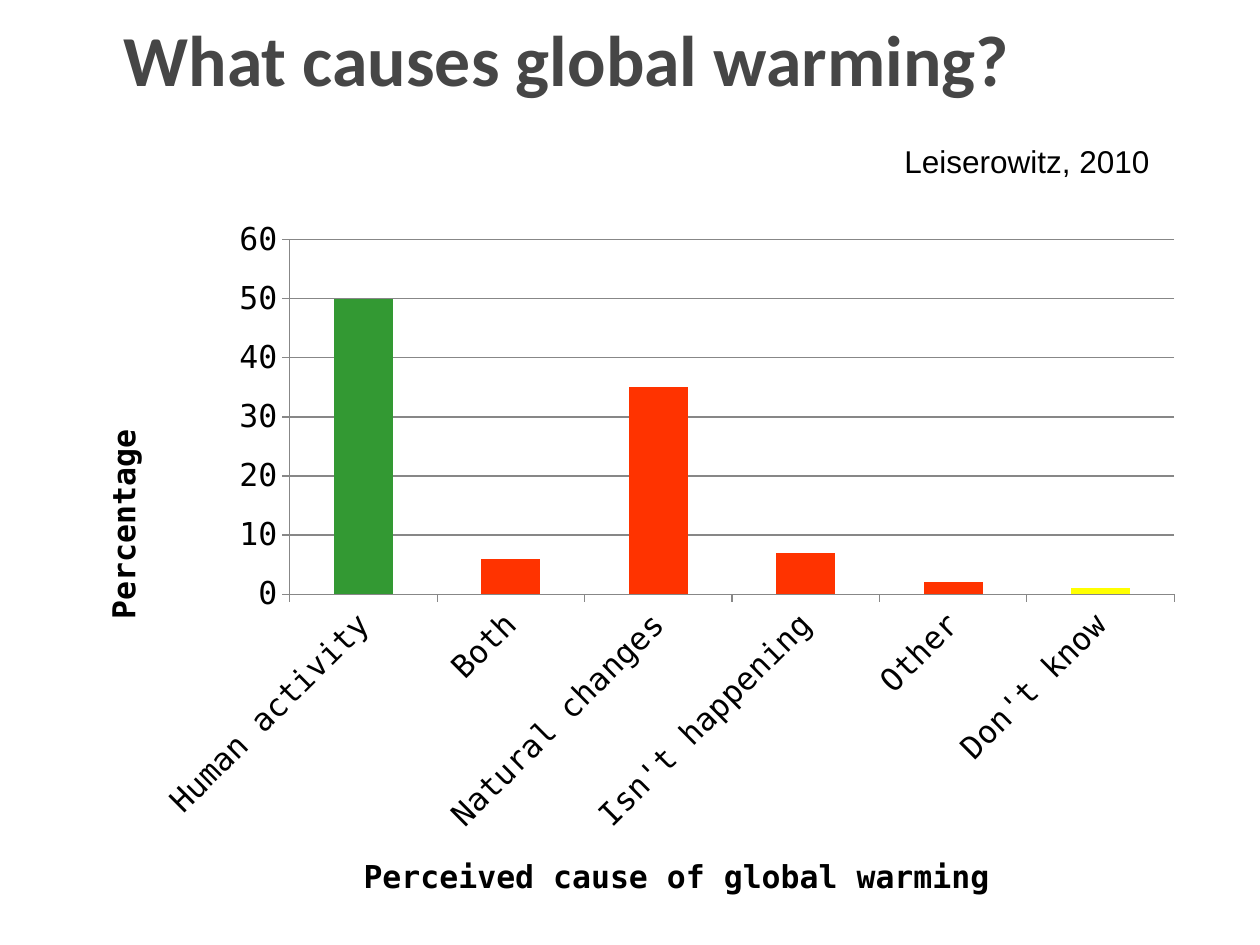
"""Build the slide on the perceived causes of global warming."""
import pptx
import pptx.chart.data
import pptx.dml.color
import pptx.enum.chart
import pptx.enum.text
import pptx.oxml
import pptx.oxml.ns
import pptx.util

Inches = pptx.util.Inches

THEME = {
    "title": {"face": "Calibri", "size": 41, "color": "464646", "bold": True},
    "source": {"face": "Arial", "size": 18, "color": "000000", "bold": False},
    "labels": {"face": "DejaVu Sans Mono", "size": 18, "color": "000000", "bold": False},
    "axis_title": {"face": "DejaVu Sans Mono", "size": 18, "color": "000000", "bold": True},
    "human": "339933",
    "sceptic": "FF3300",
    "unsure": "FFFF00",
    "lines": "878787",
}

TITLE = "What causes global warming?"
SOURCE = "Leiserowitz, 2010"
CAUSES = [
    ("Human activity", 50, "human"),
    ("Both", 6, "sceptic"),
    ("Natural changes", 35, "sceptic"),
    ("Isn't happening", 7, "sceptic"),
    ("Other", 2, "sceptic"),
    ("Don't know", 1, "unsure"),
]
PLOT_LAYOUT = {"x": 0.2, "y": 0.05, "w": 0.78, "h": 0.5}
CAUSE_AXIS = ("Perceived cause of global warming", {"x": 0.26, "y": 0.91})
PERCENT_AXIS = ("Percentage", {"x": 0.03, "y": 0.31})


def rgb(value):
    return pptx.dml.color.RGBColor.from_string(value)


def style_font(font, role):
    style = THEME[role]
    font.name = style["face"]
    font.size = pptx.util.Pt(style["size"])
    font.bold = style["bold"]
    font.color.rgb = rgb(style["color"])


def set_layout(parent, fractions, index):
    for old in parent.findall(pptx.oxml.ns.qn("c:layout")):
        parent.remove(old)
    target = '<c:layoutTarget val="inner"/>' if "w" in fractions else ""
    modes = "".join(f'<c:{edge}Mode val="edge"/>' for edge in "xy")
    values = "".join(f'<c:{key} val="{value}"/>' for key, value in fractions.items())
    parent.insert(index, pptx.oxml.parse_xml(
        f'<c:layout {pptx.oxml.ns.nsdecls("c")}><c:manualLayout>'
        f"{target}{modes}{values}</c:manualLayout></c:layout>"))


def format_axis(axis, heading):
    wording, position = heading
    axis.has_title = True
    axis.axis_title.text_frame.text = wording
    style_font(axis.axis_title.text_frame.paragraphs[0].runs[0].font, "axis_title")
    set_layout(axis.axis_title._element, position, 1)
    style_font(axis.tick_labels.font, "labels")
    axis.major_tick_mark = pptx.enum.chart.XL_TICK_MARK.OUTSIDE
    axis.minor_tick_mark = pptx.enum.chart.XL_TICK_MARK.NONE
    axis.format.line.color.rgb = rgb(THEME["lines"])


def add_title(slide):
    title = slide.shapes.title
    title.left, title.top = Inches(0), Inches(-0.17)
    title.width, title.height = Inches(9), Inches(1.25)
    title.text_frame.text = TITLE
    title.text_frame.vertical_anchor = pptx.enum.text.MSO_ANCHOR.MIDDLE
    paragraph = title.text_frame.paragraphs[0]
    paragraph.alignment = pptx.enum.text.PP_ALIGN.CENTER
    style_font(paragraph.runs[0].font, "title")


def add_source(slide):
    source = slide.shapes.add_textbox(Inches(7.08), Inches(1.08), Inches(2.17), Inches(0.4))
    source.text_frame.word_wrap = True
    source.text_frame.auto_size = pptx.enum.text.MSO_AUTO_SIZE.SHAPE_TO_FIT_TEXT
    source.text_frame.text = SOURCE
    style_font(source.text_frame.paragraphs[0].runs[0].font, "source")


def add_causes_chart(slide):
    survey = pptx.chart.data.CategoryChartData()
    survey.categories = [cause for cause, _, _ in CAUSES]
    survey.add_series("Series 1", [percent for _, percent, _ in CAUSES])
    chart = slide.shapes.add_chart(
        pptx.enum.chart.XL_CHART_TYPE.COLUMN_CLUSTERED,
        Inches(0.5), Inches(1.62), Inches(9), Inches(5.63), survey).chart
    chart.has_legend = False
    chart.has_title = False
    style_font(chart.font, "labels")
    set_layout(chart._chartSpace.chart.plotArea, PLOT_LAYOUT, 0)

    bars = chart.plots[0]
    bars.gap_width = 150
    bars.vary_by_categories = False
    series = bars.series[0]
    series.format.fill.solid()
    series.format.fill.fore_color.rgb = rgb(THEME["sceptic"])
    for index, (_, _, view) in enumerate(CAUSES):
        if view != "sceptic":
            fill = series.points[index].format.fill
            fill.solid()
            fill.fore_color.rgb = rgb(THEME[view])

    format_axis(chart.category_axis, CAUSE_AXIS)
    format_axis(chart.value_axis, PERCENT_AXIS)
    label_body = chart.category_axis._element.find(
        f'{pptx.oxml.ns.qn("c:txPr")}/{pptx.oxml.ns.qn("a:bodyPr")}')
    label_body.set("rot", "-2700000")
    heading_body = chart.value_axis.axis_title.text_frame._txBody.bodyPr
    heading_body.set("rot", "-5400000")
    heading_body.set("vert", "horz")
    chart.value_axis.minimum_scale = 0
    chart.value_axis.maximum_scale = 60
    chart.value_axis.major_unit = 10
    chart.value_axis.major_gridlines.format.line.color.rgb = rgb(THEME["lines"])


def main():
    deck = pptx.Presentation()
    deck.slide_width, deck.slide_height = Inches(10), Inches(7.5)
    slide = deck.slides.add_slide(deck.slide_layouts[5])
    add_causes_chart(slide)
    add_title(slide)
    add_source(slide)
    deck.save("out.pptx")


if __name__ == "__main__":
    main()
